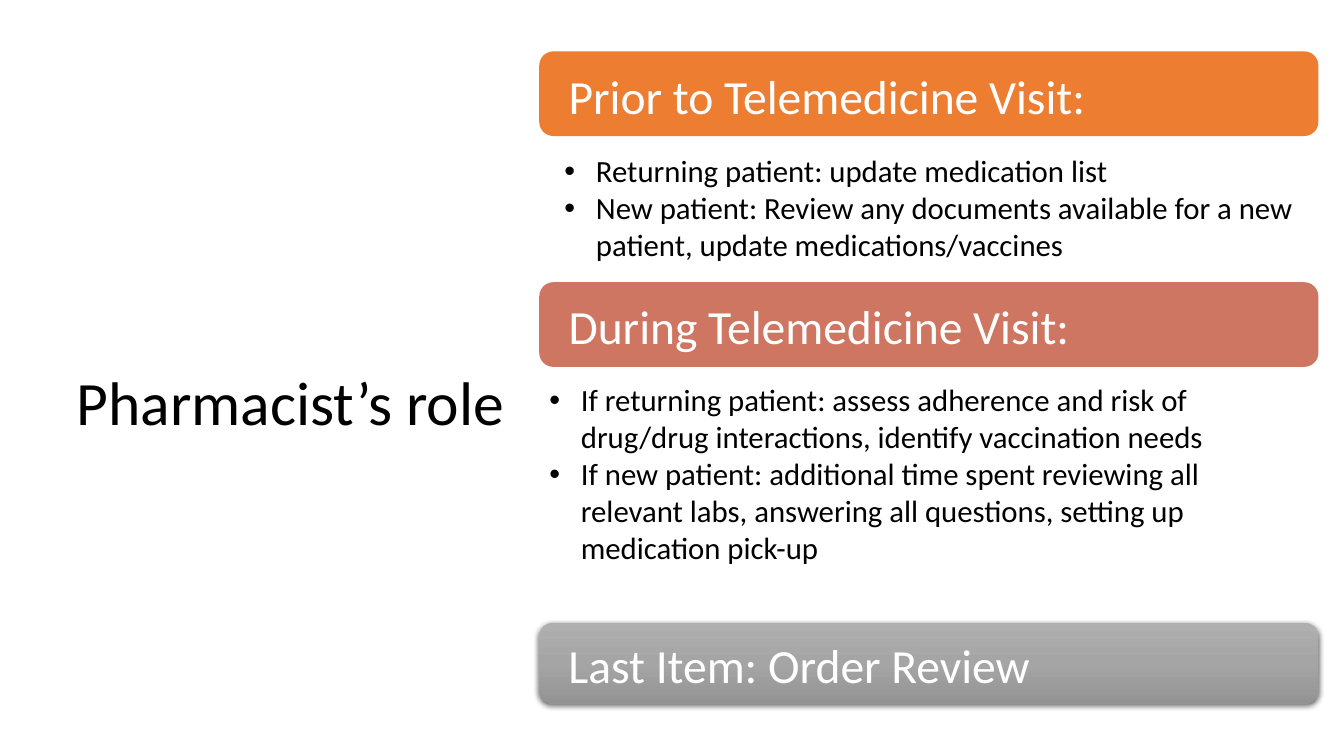
from copy import deepcopy

from pptx import Presentation
from pptx.dml.color import RGBColor as RGB
from pptx.enum.shapes import MSO_SHAPE as Shape
from pptx.enum.text import MSO_ANCHOR as Anchor, MSO_AUTO_SIZE as AutoSize, PP_ALIGN as Align
from pptx.oxml import parse_xml
from pptx.oxml.ns import nsdecls, qn
from pptx.util import Pt

TITLE = "Pharmacist’s role"
STAGES = [
    {"heading": "Prior to Telemedicine Visit:", "top": 36.72, "height": 60.48, "fill": ["ED7D31"],
     "duties": ["Returning patient: update medication list",
                "New patient: Review any documents available for a new patient, "
                "update medications/vaccines"],
     "duties_box": (396, 105.12, 87.12)},
    {"heading": "During Telemedicine Visit:", "top": 201.6, "height": 60.48, "fill": ["CE7662"],
     "duties": ["If returning patient: assess adherence and risk of drug/drug interactions, "
                "identify vaccination needs",
                "If new patient: additional time spent reviewing all relevant labs, "
                "answering all questions, setting up medication pick-up"],
     "duties_box": (385.2, 268.56, 140.4)},
    {"heading": "Last Item: Order Review", "top": 444.96, "height": 57.6,
     "fill": ["AFAFAF", "A5A5A5", "939393"], "duties": []},
]
THEME = {"font": "Calibri", "text": "000000", "on_bar": "FFFFFF", "shadow": "000000",
         "title_size": 44, "heading_size": 34, "duty_size": 22}
SLIDE_SIZE = (960, 540)
TITLE_BOX = (47.52, 237.6, 337.68, 104.4)
BAR_LEFT, COLUMN_WIDTH = 385.2, 556.56
BULLET_INDENT = 22.5


def apply_format(target, values):
    """Set each named value as an attribute of the target."""
    for name, value in values.items():
        setattr(target, name, value)


def place(part, left, top, width, height):
    """Position a part with lengths in points."""
    apply_format(part, {"left": Pt(left), "top": Pt(top), "width": Pt(width), "height": Pt(height)})


def write(part, lines, size, color, frame_format, paragraph_format):
    """Write formatted paragraphs into the text frame of a part."""
    frame = part.text_frame
    frame.text = "\n".join(lines)
    apply_format(frame, {"word_wrap": True, "auto_size": AutoSize.NONE, **frame_format})
    for paragraph in frame.paragraphs:
        apply_format(paragraph, {"alignment": Align.LEFT, "space_before": Pt(0), **paragraph_format})
        for run in paragraph.runs:
            apply_format(run.font, {"name": THEME["font"], "size": Pt(THEME[size])})
            run.font.color.rgb = RGB.from_string(THEME[color])


def shade(bar, colors):
    """Give a bar a vertical gradient and a soft shadow beneath it."""
    bar.fill.gradient()
    bar.fill.gradient_angle = 270
    properties = bar._element.spPr
    stop_list = properties.find(qn("a:gradFill")).find(qn("a:gsLst"))
    stop_list.insert(1, deepcopy(stop_list[0]))
    for index, (stop, color) in enumerate(zip(bar.fill.gradient_stops, colors)):
        stop.position = index / (len(colors) - 1)
        stop.color.rgb = RGB.from_string(color)
    properties.find(qn("a:effectLst")).append(parse_xml(
        f'<a:outerShdw {nsdecls("a")} blurRad="{Pt(4.5)}" dist="{Pt(1.5)}" dir="5400000" '
        f'algn="ctr" rotWithShape="0"><a:srgbClr val="{THEME["shadow"]}">'
        '<a:alpha val="63000"/></a:srgbClr></a:outerShdw>'))


def add_heading(slide, stage):
    """Draw the rounded bar that carries a stage heading."""
    box = [Pt(v) for v in (BAR_LEFT, stage["top"], COLUMN_WIDTH, stage["height"])]
    bar = slide.shapes.add_shape(Shape.ROUNDED_RECTANGLE, *box)
    bar.shadow.inherit = False
    bar.line.fill.background()
    if len(stage["fill"]) > 1:
        shade(bar, stage["fill"])
    else:
        bar.fill.solid()
        bar.fill.fore_color.rgb = RGB.from_string(stage["fill"][0])
    write(bar, [stage["heading"]], "heading_size", "on_bar",
          {"vertical_anchor": Anchor.MIDDLE, "margin_left": Pt(18),
           "margin_top": Pt(2), "margin_bottom": Pt(0)}, {})


def add_duties(body, stage):
    """Fill a body placeholder with the bulleted duties of a stage."""
    left, top, height = stage["duties_box"]
    place(body, left, top, COLUMN_WIDTH, height)
    write(body, stage["duties"], "duty_size", "text", {"vertical_anchor": Anchor.TOP}, {})
    for paragraph in body.text_frame.paragraphs:
        properties = paragraph._p.get_or_add_pPr()
        properties.set("marL", str(Pt(BULLET_INDENT)))
        properties.set("indent", str(-Pt(BULLET_INDENT)))


def main():
    """Build the slide and save it."""
    deck = Presentation()
    deck.slide_width, deck.slide_height = map(Pt, SLIDE_SIZE)
    slide = deck.slides.add_slide(deck.slide_layouts.get_by_name("Two Content"))
    title, *bodies = slide.placeholders
    place(title, *TITLE_BOX)
    write(title, [TITLE], "title_size", "text",
          {"vertical_anchor": Anchor.MIDDLE}, {"line_spacing": 0.9})
    for stage in STAGES:
        add_heading(slide, stage)
        if stage["duties"]:
            add_duties(bodies.pop(0), stage)
    deck.save("out.pptx")


if __name__ == "__main__":
    main()
